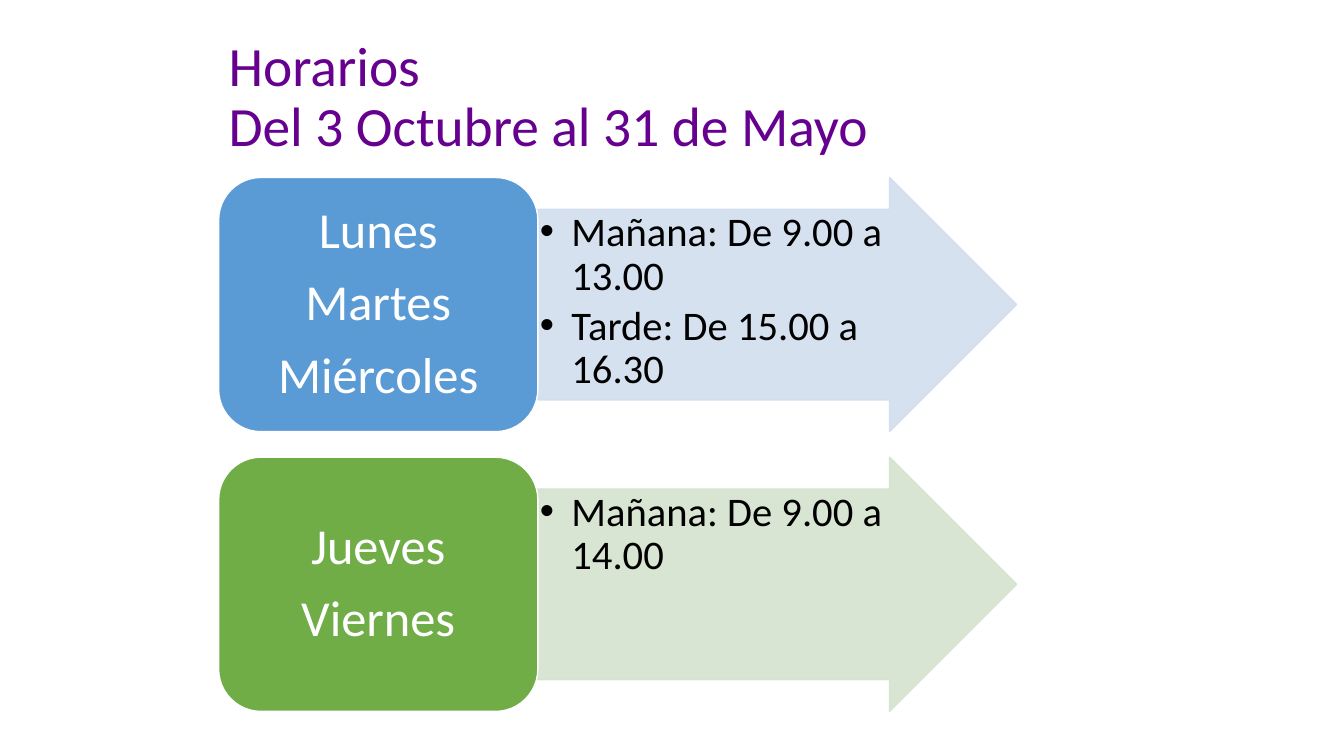
"""Build the timetable slide: each row pairs a block of days with an arrow of opening hours."""
from pptx import Presentation
from pptx.dml.color import RGBColor
from pptx.enum import shapes, text
from pptx.oxml import parse_xml
from pptx.oxml.ns import nsdecls, qn
from pptx.util import Pt

TITLE = "Horarios\vDel 3 Octubre al 31 de Mayo"
ROWS = [
    {"days": ["Lunes", "Martes", "Miércoles"],
     "hours": ["Mañana: De 9.00 a 13.00", "Tarde: De 15.00 a 16.30"],
     "block": "5B9BD5", "arrow": "D2DEEF"},
    {"days": ["Jueves", "Viernes"],
     "hours": ["Mañana: De 9.00 a 14.00"],
     "block": "70AD47", "arrow": "D5E3CF"},
]

LEFT, TOP = 156.2, 126.8
BLOCK_WIDTH, ARROW_WIDTH = 228, 342
ROW_HEIGHT, ROW_STEP = 181.6, 199.8
INDENT = 22.5
ARROW_OPACITY = 90

TITLE_STYLE = {"size": 39.6, "color": "66008F", "align": text.PP_ALIGN.LEFT, "after": 0,
               "anchor": text.MSO_ANCHOR.MIDDLE, "insets": (7.2, 3.6)}
DAYS_STYLE = {"size": 36, "color": "FFFFFF", "align": text.PP_ALIGN.CENTER, "after": 12.6,
              "anchor": text.MSO_ANCHOR.MIDDLE, "insets": (10.8, 5.4)}
HOURS_STYLE = {"size": 29, "color": "000000", "align": text.PP_ALIGN.LEFT, "after": 4.35,
               "anchor": text.MSO_ANCHOR.TOP, "insets": (1.44, 1.44)}


def color(value):
    return RGBColor.from_string(value)


def set_all(target, values):
    for name, value in values.items():
        setattr(target, name, value)


def write(box, lines, style, bulleted=False):
    frame = box.text_frame
    across, down = (Pt(inset) for inset in style["insets"])
    set_all(frame, {"word_wrap": True, "vertical_anchor": style["anchor"],
                    "margin_left": across, "margin_right": across,
                    "margin_top": down, "margin_bottom": down})
    for number, line in enumerate(lines):
        para = frame.add_paragraph() if number else frame.paragraphs[0]
        para.text = line
        set_all(para, {"alignment": style["align"], "line_spacing": 0.9,
                       "space_after": Pt(style["after"])})
        for span in para.runs:
            set_all(span.font, {"name": "Calibri", "size": Pt(style["size"])})
            span.font.color.rgb = color(style["color"])
        if bulleted:
            add_bullet(para)


def add_bullet(para):
    properties = para._p.get_or_add_pPr()
    properties.set("marL", str(Pt(INDENT)))
    properties.set("indent", str(-Pt(INDENT)))
    properties.append(parse_xml(f'<a:buFont {nsdecls("a")} typeface="Arial"/>'))
    properties.append(parse_xml(f'<a:buChar {nsdecls("a")} char="•"/>'))


def add_box(page, kind, place, fill, line, opacity=100):
    box = page.shapes.add_shape(kind, *map(Pt, place))
    box.shadow.inherit = False
    box.fill.solid()
    box.fill.fore_color.rgb = color(fill)
    box.line.color.rgb = color(line)
    box.line.width = Pt(1)
    if opacity < 100:
        for tone in box._element.spPr.iter(qn("a:srgbClr")):
            tone.append(parse_xml(f'<a:alpha {nsdecls("a")} val="{opacity * 1000}"/>'))
    return box


def main():
    deck = Presentation()
    set_all(deck, {"slide_width": Pt(960), "slide_height": Pt(540)})
    page = deck.slides.add_slide(deck.slide_layouts[6])

    title = page.shapes.add_textbox(Pt(LEFT), Pt(25.2), Pt(BLOCK_WIDTH + ARROW_WIDTH), Pt(90))
    write(title, [TITLE], TITLE_STYLE)

    for number, row in enumerate(ROWS):
        top = TOP + number * ROW_STEP
        arrow = add_box(page, shapes.MSO_SHAPE.RIGHT_ARROW,
                        (LEFT + BLOCK_WIDTH, top, ARROW_WIDTH, ROW_HEIGHT),
                        row["arrow"], row["arrow"], ARROW_OPACITY)
        arrow.adjustments[0] = 0.75
        write(arrow, row["hours"], HOURS_STYLE, bulleted=True)
        block = add_box(page, shapes.MSO_SHAPE.ROUNDED_RECTANGLE,
                        (LEFT, top, BLOCK_WIDTH, ROW_HEIGHT), row["block"], "FFFFFF")
        write(block, row["days"], DAYS_STYLE)

    deck.save("out.pptx")


if __name__ == "__main__":
    main()
